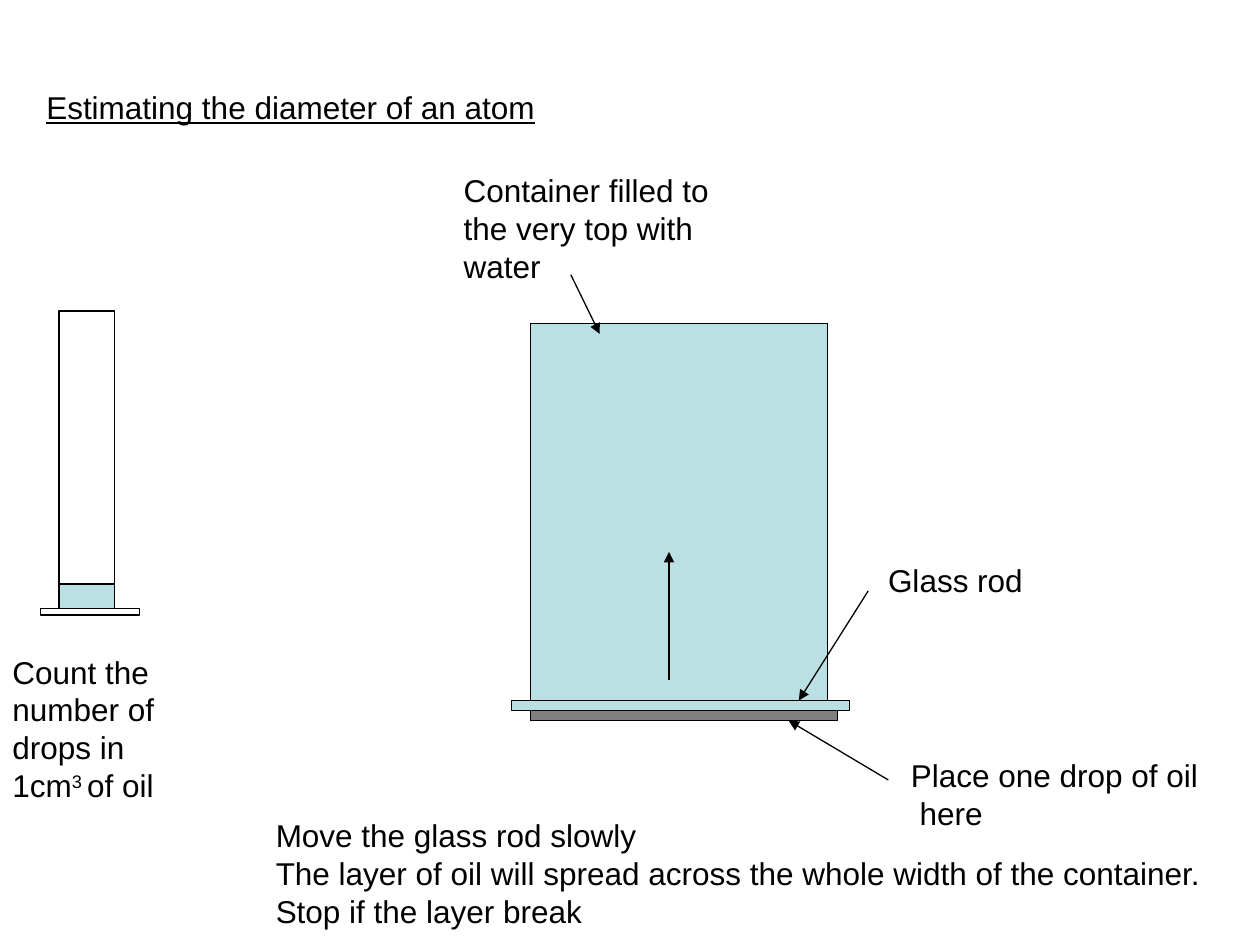
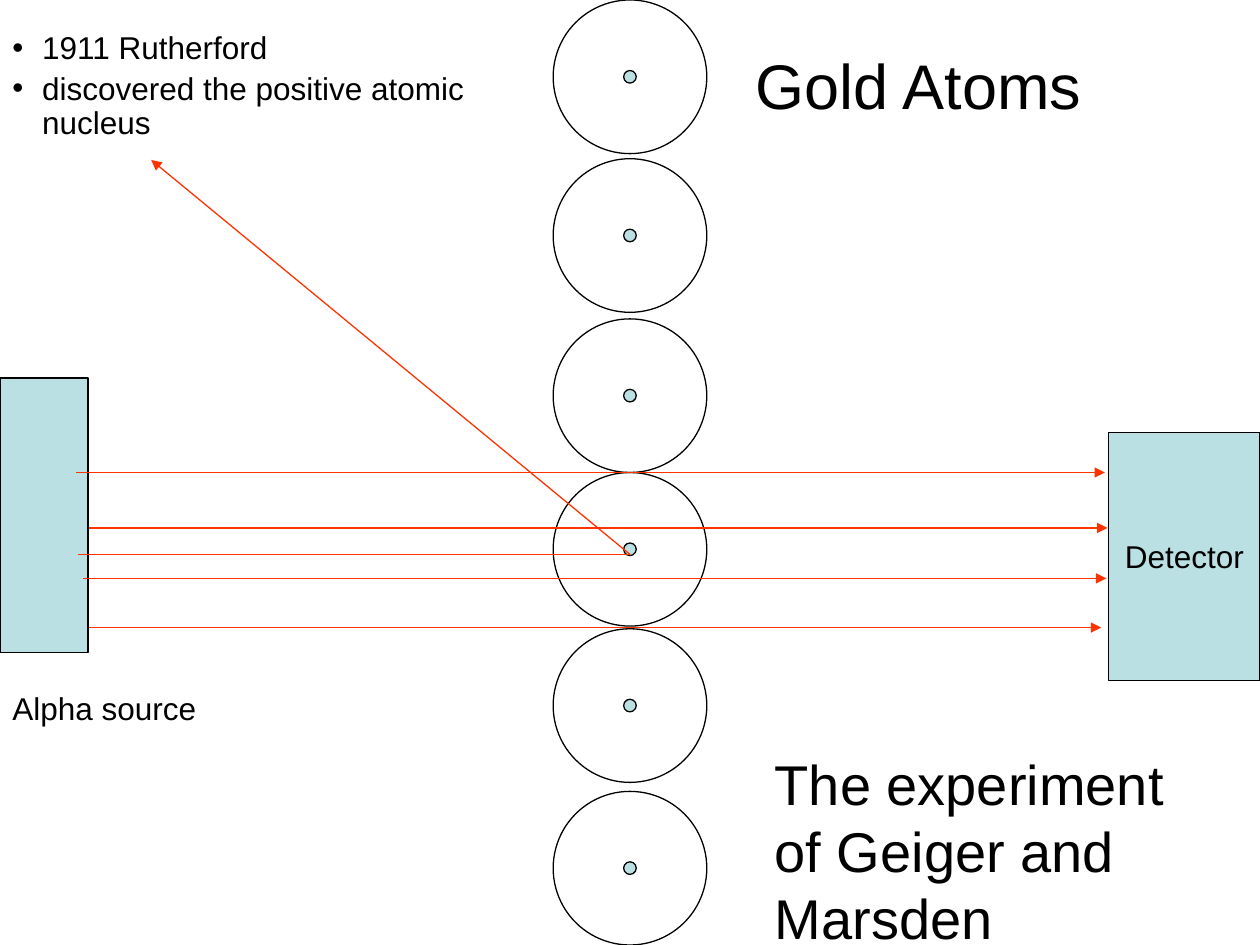
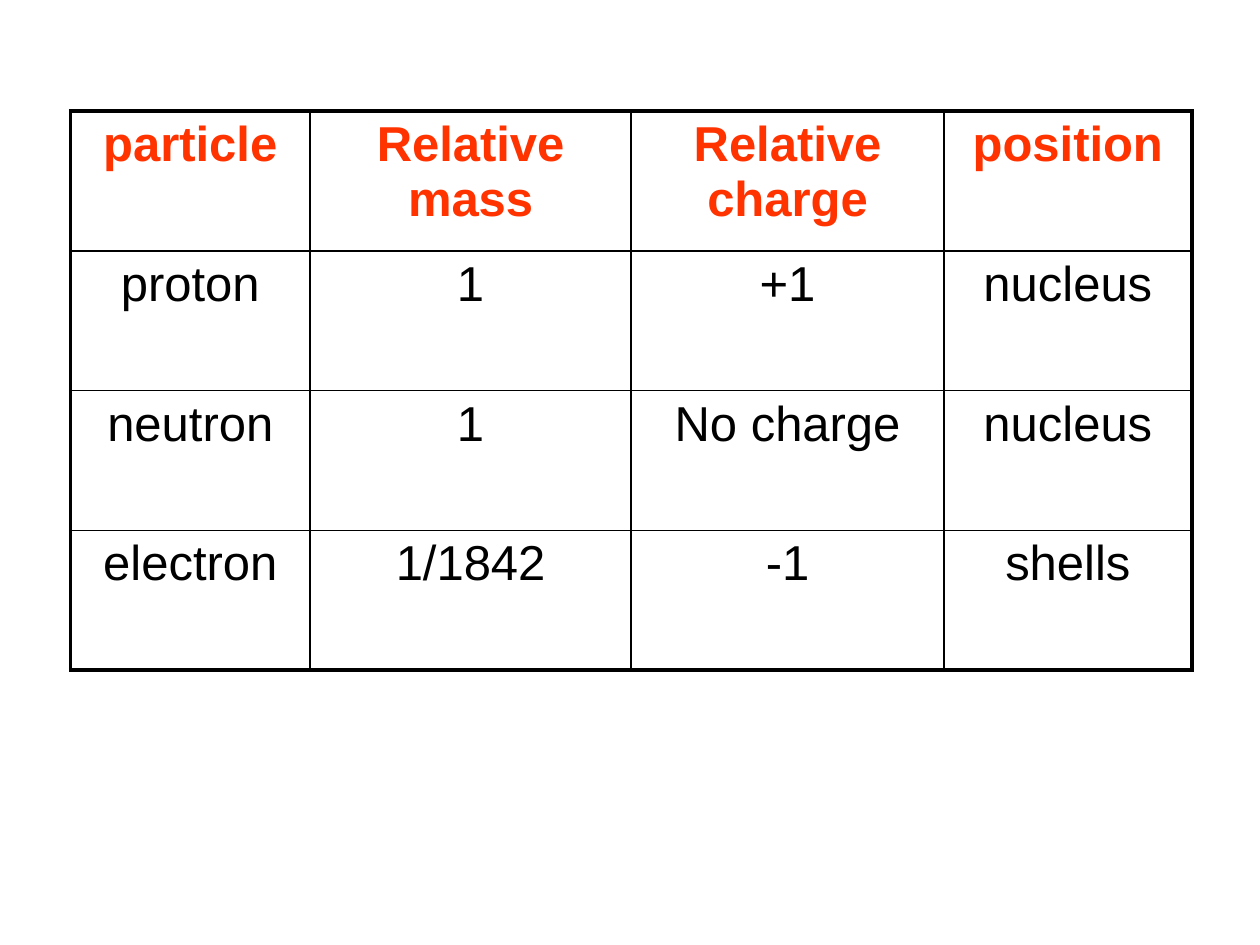
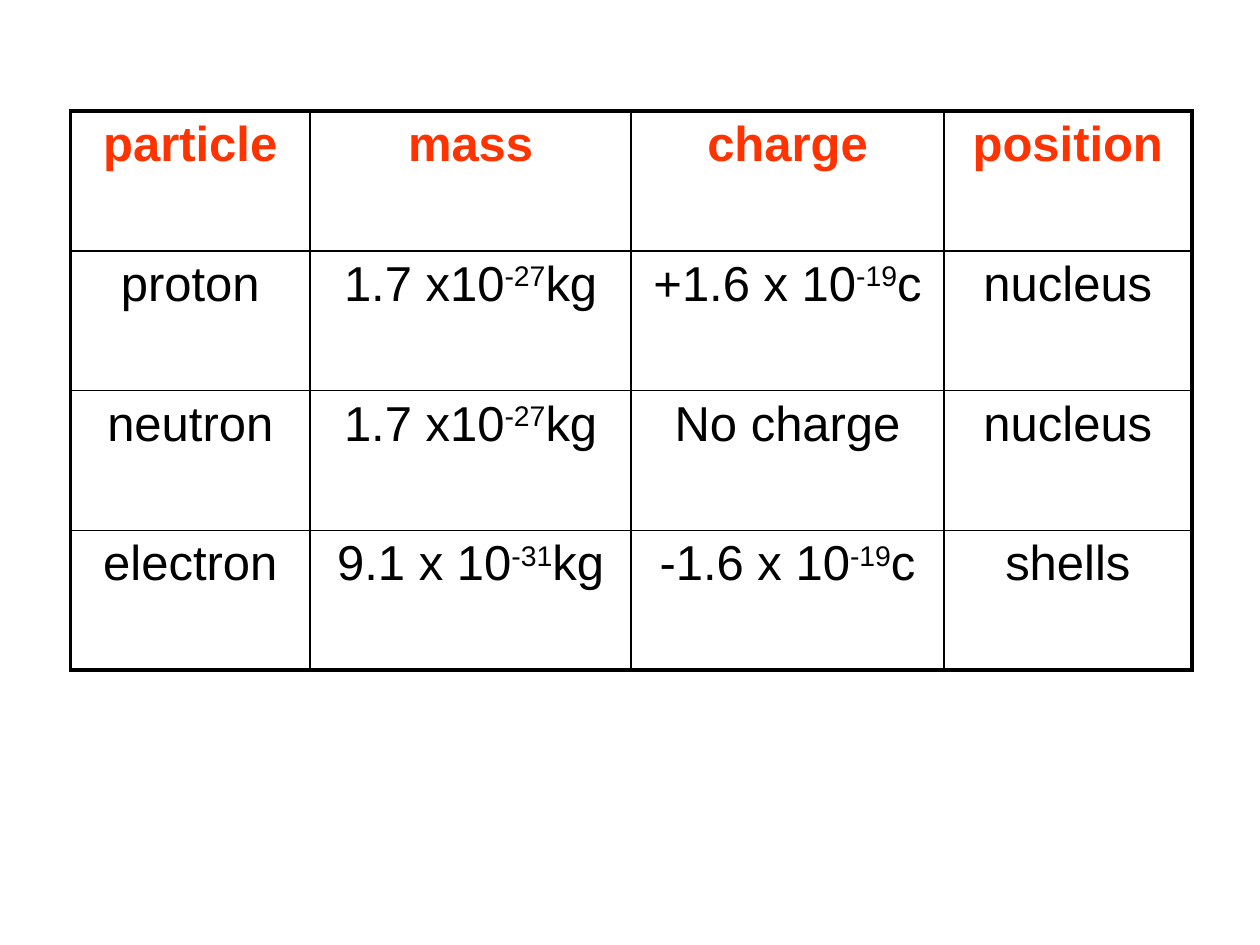
from dataclasses import dataclass

from pptx import Presentation
from pptx import util as u
from pptx.dml import color
from pptx.enum import shapes, text
from pptx.oxml import ns
from lxml import etree

# Shared look
COLOURS = {"ink": "000000", "paper": "FFFFFF", "water": "BBE0E3",
           "oil": "808080", "ray": "FF3300"}
FONT = "Arial"
BODY_SIZE = 18
HAIRLINE = 0.75
RECTANGLE = shapes.MSO_SHAPE.RECTANGLE
OVAL = shapes.MSO_SHAPE.OVAL


@dataclass
class Box:
    left: float
    top: float
    width: float
    height: float
    fill: str | None = None
    label: str = ""


@dataclass
class Caption:
    lines: list[str]
    left: float
    top: float
    width: float
    height: float
    size: float = BODY_SIZE
    underline: bool = False
    wrap: bool = True
    bullets: bool = False


@dataclass
class Line:
    start: tuple[float, float]
    end: tuple[float, float]
    colour: str = "ink"
    arrow: bool = True


def rgb(name: str) -> color.RGBColor:
    return color.RGBColor.from_string(COLOURS[name])


def sub(parent, tag: str, **attributes: str):
    return etree.SubElement(parent, ns.qn(tag), attributes)


# Text: parts between two ^ marks are raised
def write(paragraph, content: str, size: float, colour: str = "ink",
          bold: bool = False, underline: bool = False) -> None:
    first, *others = content.split("^")
    paragraph.text = first
    for index, part in enumerate(others, start=1):
        run = paragraph.add_run()
        run.text = part
        if index % 2:
            run._r.get_or_add_rPr().set("baseline", "30000")
    for run in paragraph.runs:
        run.font.name = FONT
        run.font.size = u.Pt(size)
        run.font.color.rgb = rgb(colour)
        run.font.bold = bold
        run.font.underline = underline


def add_bullet(paragraph) -> None:
    paragraph.line_spacing = 0.9
    paragraph.space_before = u.Pt(0.2 * BODY_SIZE)
    properties = paragraph._p.get_or_add_pPr()
    properties.set("marL", str(u.Pt(17)))
    properties.set("indent", str(-u.Pt(17)))
    sub(properties, "a:buFont", typeface=FONT)
    sub(properties, "a:buChar", char="•")


def draw_caption(slide, caption: Caption) -> None:
    shape = slide.shapes.add_textbox(u.Pt(caption.left), u.Pt(caption.top),
                                     u.Pt(caption.width), u.Pt(caption.height))
    frame = shape.text_frame
    frame.word_wrap = caption.wrap
    frame.auto_size = text.MSO_AUTO_SIZE.SHAPE_TO_FIT_TEXT
    frame.text = "\n".join(caption.lines)
    for paragraph, line in zip(frame.paragraphs, caption.lines):
        write(paragraph, line, caption.size, underline=caption.underline)
        if caption.bullets:
            add_bullet(paragraph)


# Outlined shapes and lines
def draw_box(parent, box: Box, kind=RECTANGLE) -> None:
    shape = parent.shapes.add_shape(kind, u.Pt(box.left), u.Pt(box.top),
                                    u.Pt(box.width), u.Pt(box.height))
    shape.shadow.inherit = False
    if box.fill:
        shape.fill.solid()
        shape.fill.fore_color.rgb = rgb(box.fill)
    else:
        shape.fill.background()
    shape.line.color.rgb = rgb("ink")
    shape.line.width = u.Pt(HAIRLINE)
    if box.label:
        frame = shape.text_frame
        frame.word_wrap = False
        frame.vertical_anchor = text.MSO_ANCHOR.MIDDLE
        write(frame.paragraphs[0], box.label, BODY_SIZE)
        frame.paragraphs[0].alignment = text.PP_ALIGN.CENTER


def draw_line(slide, line: Line) -> None:
    connector = slide.shapes.add_connector(
        shapes.MSO_CONNECTOR.STRAIGHT, *map(u.Pt, line.start + line.end))
    connector.line.color.rgb = rgb(line.colour)
    connector.line.width = u.Pt(HAIRLINE)
    if line.arrow:
        sub(connector.line._get_or_add_ln(), "a:tailEnd", type="triangle")
    sub(connector._element.spPr, "a:effectLst")


def draw_atom(slide, top: float) -> None:
    size, nucleus = 87.8, 7.2
    left, inset = 316.1, (size - nucleus) / 2
    atom = slide.shapes.add_group_shape()
    draw_box(atom, Box(left, top, size, size), OVAL)
    draw_box(atom, Box(left + inset, top + inset, nucleus, nucleus, "water"), OVAL)


# Particle tables: heavy frame, thin inner rules, red headings
COLUMN_WIDTHS = [136.8, 183.6, 178.6, 141.8]
ROW_HEIGHT = 79.9


def add_border(cell, tag: str, outer: bool) -> None:
    width = u.Pt(2.25 if outer else 1)
    line = sub(cell._tc.get_or_add_tcPr(), tag, w=str(width))
    sub(sub(line, "a:solidFill"), "a:srgbClr", val=COLOURS["ink"])


def draw_table(slide, rows: list[list[str]]) -> None:
    last_row, last_column = len(rows) - 1, len(COLUMN_WIDTHS) - 1
    table = slide.shapes.add_table(
        len(rows), len(COLUMN_WIDTHS), u.Pt(40.3), u.Pt(63.4),
        u.Pt(sum(COLUMN_WIDTHS)), u.Pt(ROW_HEIGHT * len(rows))).table
    table.first_row = table.horz_banding = False
    for column, width in zip(table.columns, COLUMN_WIDTHS):
        column.width = u.Pt(width)
    for r, values in enumerate(rows):
        table.rows[r].height = u.Pt(ROW_HEIGHT)
        for c, value in enumerate(values):
            cell = table.cell(r, c)
            paragraph = cell.text_frame.paragraphs[0]
            write(paragraph, value, 28, "ink" if r else "ray", bold=r == 0)
            paragraph.alignment = text.PP_ALIGN.CENTER
            add_border(cell, "a:lnL", c == 0)
            add_border(cell, "a:lnR", c == last_column)
            add_border(cell, "a:lnT", r == 0)
            add_border(cell, "a:lnB", r == last_row)
            cell.fill.background()


# Slide 1: oil drop experiment
OIL_BOXES = [
    Box(33.8, 177.8, 31.7, 169.9, "paper"),   # measuring cylinder
    Box(23, 347.8, 56.9, 3.6, "paper"),       # cylinder foot
    Box(33.8, 333.8, 31.7, 14, "water"),      # oil in the cylinder
    Box(303.1, 185, 169.9, 226.8, "water"),   # water container
    Box(292.3, 400.3, 193, 5.8, "water"),     # glass rod
    Box(303.1, 406.1, 175.7, 5.8, "oil"),     # oil layer
]
OIL_LINES = [
    Line((382.3, 388.8), (382.3, 315.4)),
    Line((326.2, 157), (342.7, 190.8)),
    Line((507.6, 445.7), (450.7, 411.8)),
    Line((496.1, 337.7), (456.5, 400.3)),
]
OIL_CAPTIONS = [
    Caption(["Estimating the diameter of an atom"], 19.4, 46.8, 602.6, 28.8,
            underline=True),
    Caption(["Count the number of drops in 1cm^3 ^of oil"], 0, 369.4, 115.2, 93.6),
    Caption(["Place one drop of oil\v here"], 513.4, 428.4, 181.4, 50.4),
    Caption(["Container filled to the very top with water"], 257.8, 94.3, 181.4, 72),
    Caption(["Glass rod"], 500.4, 316.8, 91.4, 28.8, wrap=False),
    Caption(["Move the glass rod slowly",
             "The layer of oil will spread across the whole width of the container.",
             "Stop if the layer break"], 150.5, 463, 543.6, 72, wrap=False),
]

# Slide 2: scattering experiment
ATOM_TOPS = [0, 90.7, 182.2, 270, 359.3, 452.2]
SCATTER_BOXES = [
    Box(633.6, 247, 86.4, 141.8, "water", "Detector"),
    Box(0, 216, 50.4, 157, "water"),
]
HIT = (360, 316.8)
SCATTER_LINES = [
    Line((43.2, 270), (631.4, 270), "ray"),
    Line((47.5, 330.5), (632.2, 330.5), "ray"),
    Line((51.1, 301.7), (632.9, 301.7), "ray"),
    Line((51.1, 358.6), (629.3, 358.6), "ray"),
    Line((44.6, 316.8), HIT, "ray", arrow=False),
    Line(HIT, (86.4, 91.4), "ray"),
]
SCATTER_CAPTIONS = [
    Caption(["Gold Atoms"], 424.8, 23, 207.4, 50.4, size=36),
    Caption(["Alpha source"], 0, 390.2, 133.2, 28.8),
    Caption(["The experiment of Geiger and Marsden"], 435.6, 424.8, 260.6, 122.4,
            size=32),
    Caption(["1911 Rutherford", "discovered the positive atomic nucleus"],
            0, 15.1, 329, 50.4, bullets=True),
]

# Slides 3 and 4: particle properties
RELATIVE_VALUES = [
    ["particle", "Relative mass", "Relative charge", "position"],
    ["proton", "1", "+1", "nucleus"],
    ["neutron", "1", "No charge", "nucleus"],
    ["electron", "1/1842", "-1", "shells"],
]
ABSOLUTE_VALUES = [
    ["particle", "mass", "charge", "position"],
    ["proton", "1.7 x10^-27^kg", "+1.6 x 10^-19^c", "nucleus"],
    ["neutron", "1.7 x10^-27^kg", "No charge", "nucleus"],
    ["electron", "9.1 x 10^-31^kg", "-1.6 x 10^-19^c", "shells"],
]


def draw_diagram(slide, boxes: list[Box], lines: list[Line],
                 captions: list[Caption]) -> None:
    for box in boxes:
        draw_box(slide, box)
    for line in lines:
        draw_line(slide, line)
    for caption in captions:
        draw_caption(slide, caption)


def main() -> None:
    presentation = Presentation()
    presentation.slide_width, presentation.slide_height = u.Pt(720), u.Pt(540)
    blank = presentation.slide_layouts[6]
    oil, scatter, relative, absolute = (
        presentation.slides.add_slide(blank) for _ in range(4))

    draw_diagram(oil, OIL_BOXES, OIL_LINES, OIL_CAPTIONS)
    for top in ATOM_TOPS:
        draw_atom(scatter, top)
    draw_diagram(scatter, SCATTER_BOXES, SCATTER_LINES, SCATTER_CAPTIONS)
    draw_table(relative, RELATIVE_VALUES)
    draw_table(absolute, ABSOLUTE_VALUES)
    presentation.save("out.pptx")


if __name__ == "__main__":
    main()
